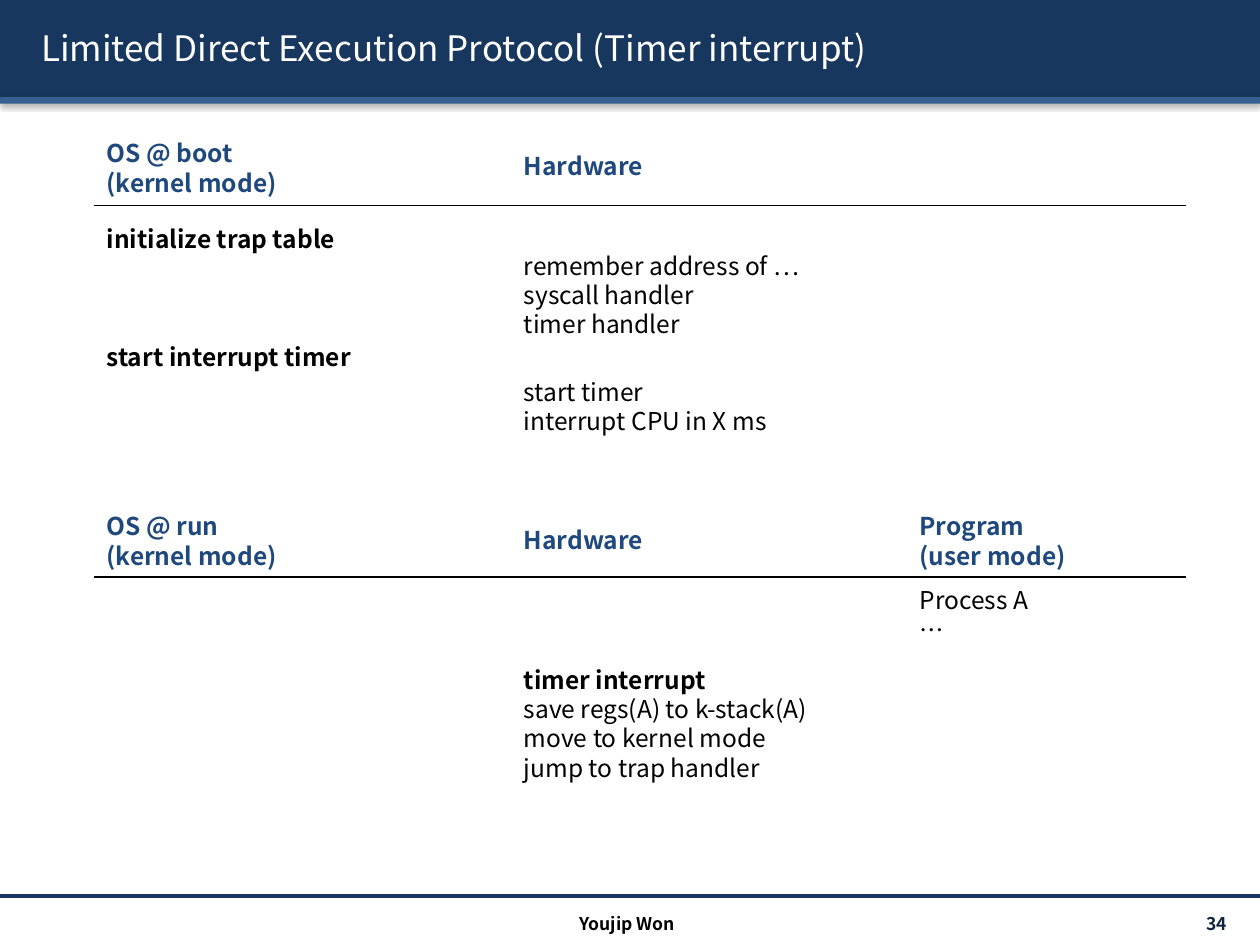
from dataclasses import dataclass

from lxml.etree import SubElement
from pptx import Presentation
from pptx.dml.color import RGBColor
from pptx.enum.shapes import MSO_CONNECTOR, MSO_SHAPE
from pptx.enum.text import MSO_ANCHOR, PP_ALIGN
from pptx.oxml.ns import qn
from pptx.util import Cm, Pt

FONT = "Noto Sans CJK KR"
NAVY, STEEL, BLUE, INK = "17375E", "376092", "1F497D", "000000"
OS, HARD, PROG = 1.9, 10.31, 18.29  # column left edges, cm
WIDE, RIGHT = 25.4, 23.9


@dataclass
class Note:
    text: str
    left: float
    top: float
    width: float = 6.43
    color: str = INK
    bold: int = 0  # number of leading bold lines

    @property
    def height(self) -> float:
        return 0.86 + 0.59 * self.text.count("\n")


def head(text: str, left: float, top: float) -> Note:
    """Blue column heading, bold throughout."""
    return Note(text, left, top, 4.8, BLUE, 2)


NOTES = [
    head("OS @ boot\n(kernel mode)", OS, 2.67),
    head("Hardware", HARD, 2.92),
    Note("initialize trap table", OS, 4.39, bold=1),
    Note("remember address of …\nsyscall handler\ntimer handler", HARD, 4.93),
    Note("start interrupt timer", OS, 6.78, bold=1),
    Note("start timer\ninterrupt CPU in X ms", HARD, 7.47),
    head("OS @ run\n(kernel mode)", OS, 10.19),
    head("Hardware", HARD, 10.46),
    head("Program\n(user mode)", PROG, 10.19),
    Note("Process A\n…", PROG, 11.68),
    Note(
        "timer interrupt\nsave regs(A) to k-stack(A)\n"
        "move to kernel mode\njump to trap handler",
        HARD, 13.28, bold=1,
    ),
]


def rgb(code: str) -> RGBColor:
    return RGBColor.from_string(code)


def shade(props, blur: float, dist: float, angle: int, alpha: int) -> None:
    """Add an outer black shadow; blur and distance are in points."""
    effects = props.find(qn("a:effectLst"))
    if effects is None:
        effects = SubElement(props, qn("a:effectLst"))
    outer = SubElement(
        effects, qn("a:outerShdw"), blurRad=str(Pt(blur)), dist=str(Pt(dist)),
        dir=str(angle * 60000), algn="t", rotWithShape="0",
    )
    tone = SubElement(outer, qn("a:srgbClr"), val=INK)
    SubElement(tone, qn("a:alpha"), val=str(alpha * 1000))


def add_bar(slide, top: float, height: float, color: str) -> None:
    bar = slide.shapes.add_shape(
        MSO_SHAPE.RECTANGLE, 0, Cm(top), Cm(WIDE), Cm(height))
    bar.fill.solid()
    bar.fill.fore_color.rgb = rgb(color)
    bar.line.fill.background()
    bar.shadow.inherit = False
    shade(bar._element.spPr, 3.1, 1.6, 90, 38)


def add_rule(slide, left: float, right: float, y: float,
             color: str, weight: float) -> None:
    rule = slide.shapes.add_connector(
        MSO_CONNECTOR.STRAIGHT, Cm(left), Cm(y), Cm(right), Cm(y))
    rule.line.color.rgb = rgb(color)
    rule.line.width = Pt(weight)
    SubElement(rule._element.spPr, qn("a:effectLst"))


def add_text(slide, note: Note, size: int = 14, height: float = 0,
             align=PP_ALIGN.LEFT, anchor=MSO_ANCHOR.TOP):
    box = slide.shapes.add_textbox(
        Cm(note.left), Cm(note.top), Cm(note.width), Cm(height or note.height))
    frame = box.text_frame
    frame.word_wrap = True
    frame.vertical_anchor = anchor
    frame.text = note.text
    for row, para in enumerate(frame.paragraphs):
        para.alignment = align
        para.line_spacing = Pt(round(size * 1.196, 2))
        for run in para.runs:
            font = run.font
            font.name, font.size = FONT, Pt(size)
            font.bold = row < note.bold
            font.color.rgb = rgb(note.color)
            SubElement(run._r.get_or_add_rPr(), qn("a:ea"), typeface=FONT)
    return box


def add_title(slide, text: str) -> None:
    note = Note(text, 0.58, 0.15, 24.41, "FFFFFF")
    box = add_text(slide, note, 20, 1.63, anchor=MSO_ANCHOR.MIDDLE)
    props = box.text_frame.paragraphs[0].runs[0]._r.rPr
    shade(props, 3, 3, 45, 43)
    fill = props.find(qn("a:solidFill"))
    fill.addnext(props.find(qn("a:effectLst")))


def main() -> None:
    deck = Presentation()
    deck.slide_width, deck.slide_height = Cm(WIDE), Cm(19.05)
    slide = deck.slides.add_slide(deck.slide_layouts[6])
    add_bar(slide, 0, 1.96, NAVY)
    add_bar(slide, 1.96, 0.13, STEEL)
    add_rule(slide, 0, WIDE, 18.06, NAVY, 2)
    add_title(slide, "Limited Direct Execution Protocol (Timer interrupt)")
    page = Note("34", 22.02, 18.31, 2.97, "0F243E", 1)
    add_text(slide, page, 10, 0.61, PP_ALIGN.RIGHT, MSO_ANCHOR.MIDDLE)
    name = Note("Youjip Won", 8.43, 18.29, 8.43, bold=1)
    add_text(slide, name, 10, 0.61, PP_ALIGN.CENTER)
    for y in (4.14, 11.63):
        add_rule(slide, OS, RIGHT, y, INK, 1)
    for note in NOTES:
        add_text(slide, note)
    deck.save("out.pptx")


if __name__ == "__main__":
    main()
